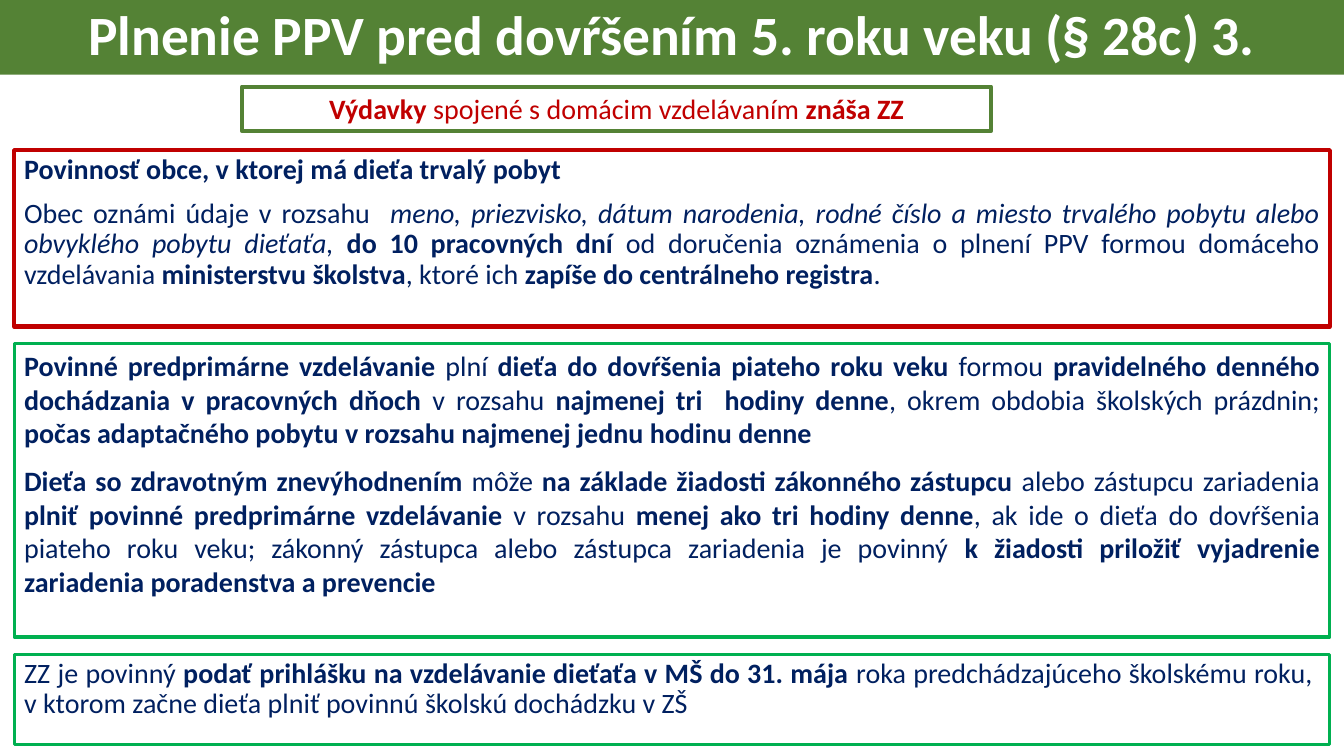
from pptx import Presentation
from pptx.dml.color import RGBColor
from pptx.enum.shapes import MSO_SHAPE as SHAPE
from pptx.enum.text import MSO_ANCHOR as ANCHOR, PP_ALIGN as ALIGN
from pptx.util import Inches, Pt

GREEN, BRIGHT, RED, NAVY, WHITE = "548235", "00B050", "C00000", "002060", "FFFFFF"
LEFT, WIDTH = 0.14, 13.05


def rgb(value):
    return RGBColor.from_string(value)


class SlideBuilder:
    """Holds the text style and the current slide."""

    def __init__(self, prs):
        self.style = {"name": "Calibri", "size": Pt(20)}
        self.s = prs.slides.add_slide(prs.slide_layouts[6])

    def box(self, at, fill=None, line=None, width=0, anchor=ANCHOR.TOP):
        sp = self.s.shapes.add_shape(SHAPE.RECTANGLE, *map(Inches, at))
        sp.shadow.inherit = False
        if fill:
            sp.fill.solid()
            sp.fill.fore_color.rgb = rgb(fill)
        else:
            sp.fill.background()
        if line:
            sp.line.color.rgb = rgb(line)
            sp.line.width = Pt(width)
        else:
            sp.line.fill.background()
        tf = sp.text_frame
        tf.word_wrap = True
        tf.vertical_anchor = anchor
        return tf

    def text(self, tf, paragraphs, color, align=ALIGN.JUSTIFY, spacing=1.0, **font):
        for i, runs in enumerate(paragraphs):
            p = tf.add_paragraph() if i else tf.paragraphs[0]
            form = {"alignment": align, "line_spacing": spacing,
                    "space_before": Pt(10 if i else 0)}
            for key, value in form.items():
                setattr(p, key, value)
            for words, marks in runs:
                r = p.add_run()
                r.text = words
                look = {**self.style, "bold": "b" in marks, "italic": "i" in marks, **font}
                for key, value in look.items():
                    setattr(r.font, key, value)
                r.font.color.rgb = rgb(color)


TITLE = [[("Plnenie PPV pred dovŕšením 5. roku veku (§ 28c) 3.", "b")]]
COSTS = [[("Výdavky", "b"), (" spojené s domácim vzdelávaním ", ""), ("znáša ZZ", "b")]]
HEADING = [[("Povinnosť obce, v ktorej má dieťa trvalý pobyt", "b")]]
MUNICIPALITY = HEADING + [[
    ("Obec oznámi údaje v rozsahu  ", ""),
    ("meno, priezvisko, dátum narodenia, rodné číslo a miesto trvalého pobytu "
     "alebo obvyklého pobytu dieťaťa, ", "i"),
    ("do 10 pracovných dní ", "b"),
    ("od doručenia oznámenia o plnení PPV formou domáceho vzdelávania ", ""),
    ("ministerstvu školstva", "b"),
    (", ktoré ich ", ""),
    ("zapíše do centrálneho registra", "b"),
    (".", ""),
]]
ATTENDANCE = [[
    ("Povinné predprimárne vzdelávanie ", "b"),
    ("plní ", ""),
    ("dieťa do dovŕšenia piateho roku veku ", "b"),
    ("formou ", ""),
    ("pravidelného denného dochádzania v pracovných dňoch ", "b"),
    ("v rozsahu ", ""),
    ("najmenej tri  hodiny denne", "b"),
    (", okrem obdobia školských prázdnin; ", ""),
    ("počas adaptačného pobytu v rozsahu najmenej jednu hodinu denne ", "b"),
], [
    ("Dieťa so zdravotným znevýhodnením ", "b"),
    ("môže ", ""),
    ("na základe žiadosti zákonného zástupcu ", "b"),
    ("alebo zástupcu zariadenia ", ""),
    ("plniť povinné predprimárne vzdelávanie ", "b"),
    ("v rozsahu ", ""),
    ("menej ako tri hodiny denne", "b"),
    (", ak ide o dieťa do dovŕšenia piateho roku veku; zákonný zástupca "
     "alebo zástupca zariadenia je povinný ", ""),
    ("k žiadosti priložiť vyjadrenie zariadenia poradenstva a prevencie", "b"),
]]
ENROLMENT = [[
    ("ZZ je povinný ", ""),
    ("podať prihlášku na vzdelávanie dieťaťa v MŠ do 31. mája ", "b"),
    ("roka predchádzajúceho školskému roku,  v ktorom začne dieťa plniť "
     "povinnú školskú dochádzku v ZŠ", ""),
]]


def main():
    prs = Presentation()
    prs.slide_width, prs.slide_height = Inches(13.33), Inches(7.5)
    b = SlideBuilder(prs)

    title = b.box((0, 0, 13.33, 0.74), fill=GREEN, anchor=ANCHOR.MIDDLE)
    b.text(title, TITLE, WHITE, ALIGN.CENTER, 0.9, size=Pt(39.6))
    costs = b.box((2.4, 0.86, 7.43, 0.44), line=GREEN, width=3)
    b.text(costs, COSTS, RED, ALIGN.CENTER)

    for top, height, line, width, spacing, paragraphs in (
        (1.49, 1.75, RED, 3, 0.9, MUNICIPALITY),
        (3.41, 2.91, BRIGHT, 2.25, 1.0, ATTENDANCE),
        (6.49, 0.9, BRIGHT, 2.25, 0.9, ENROLMENT),
    ):
        tf = b.box((LEFT, top, WIDTH, height), line=line, width=width)
        b.text(tf, paragraphs, NAVY, spacing=spacing)

    prs.save("out.pptx")


if __name__ == "__main__":
    main()
